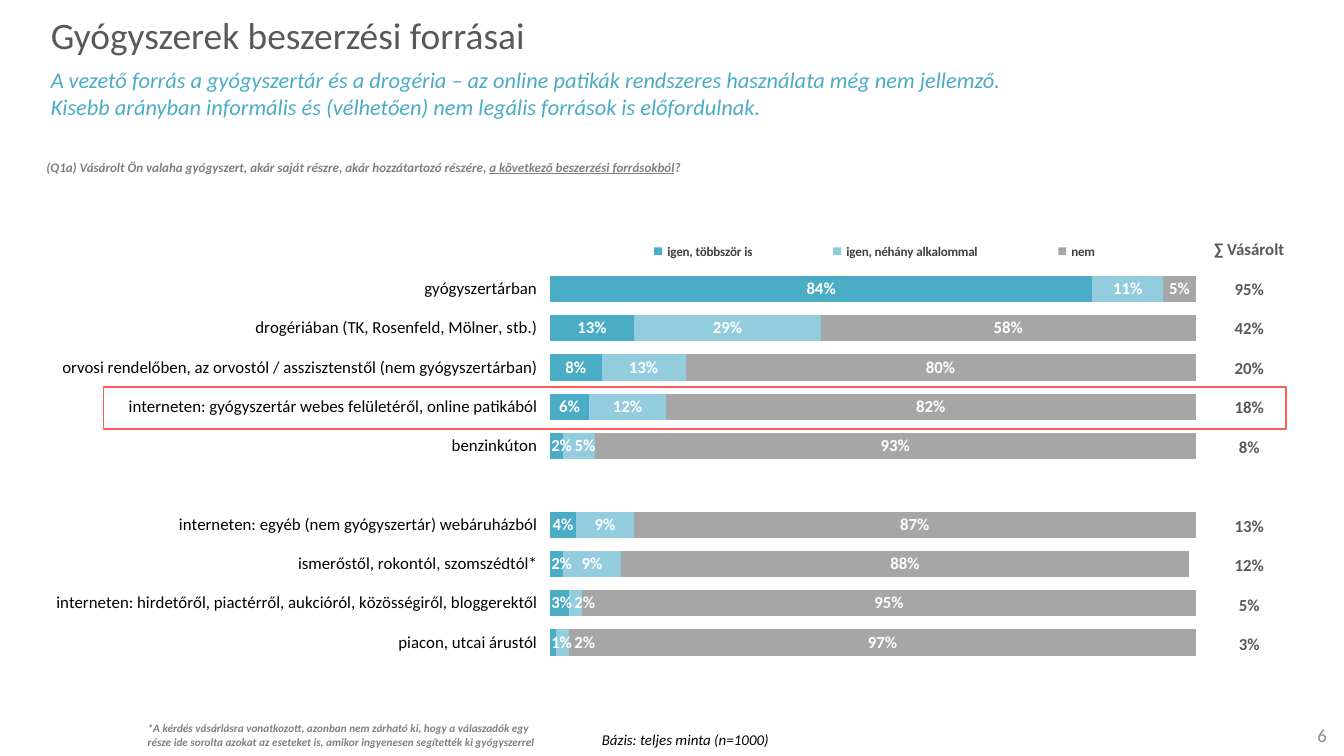
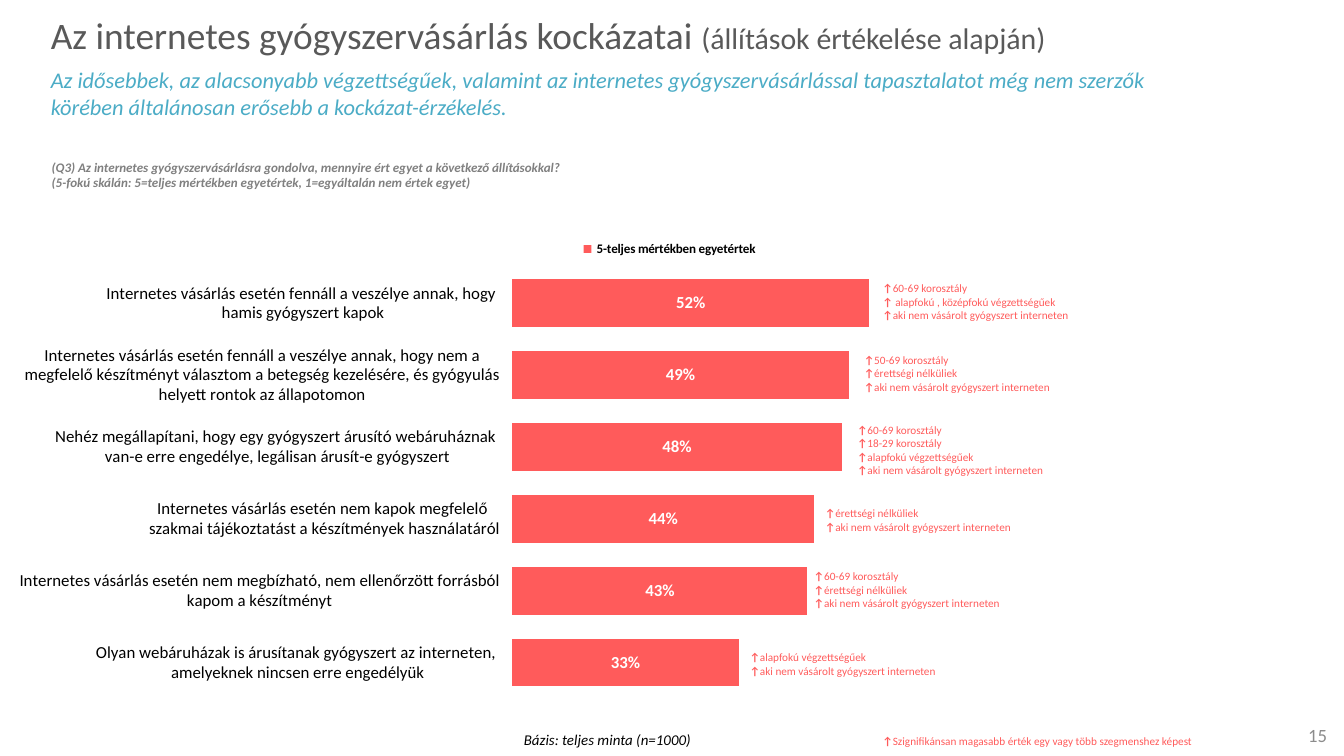
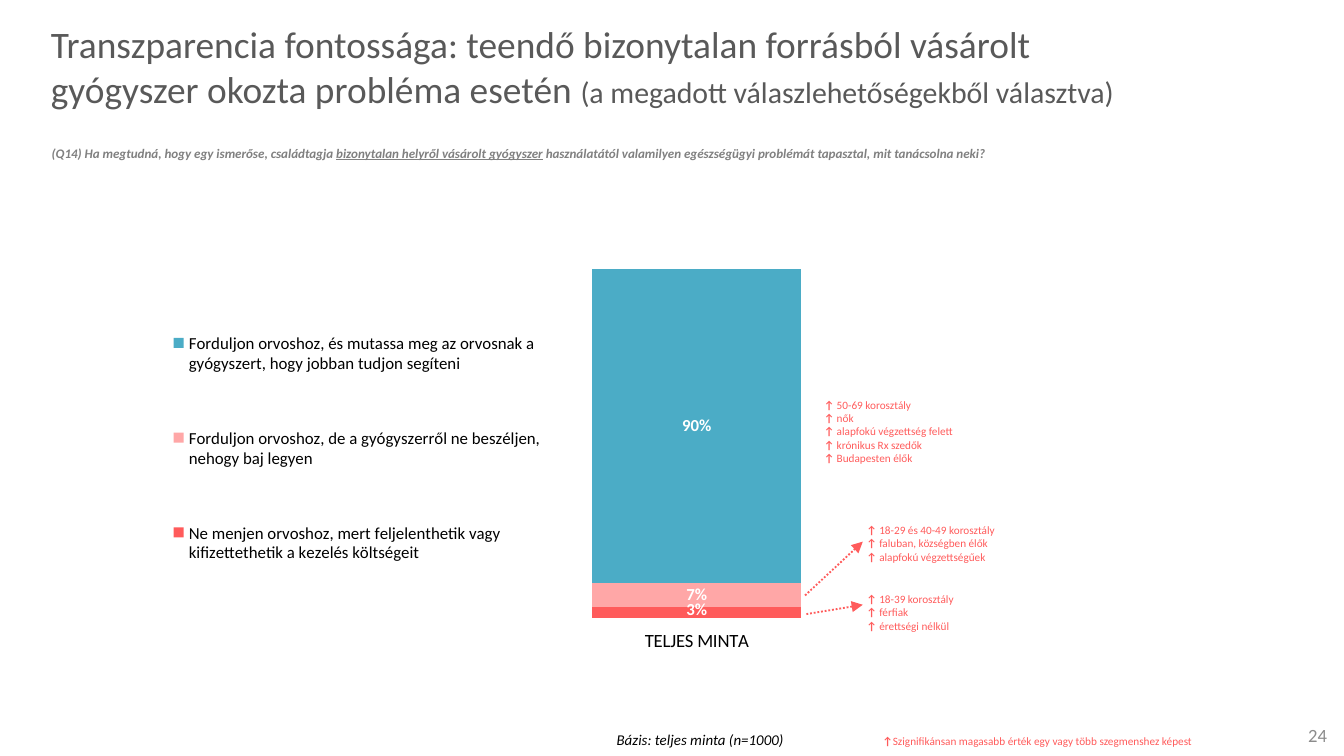
from lxml import etree
from pptx import Presentation
from pptx import util as u
from pptx.chart import data as chart_data
from pptx.dml import color as dml_color
from pptx.enum import chart as charts, dml, shapes, text
from pptx.oxml import ns

Pt = u.Pt
COLORS = {
    "black": "000000", "white": "FFFFFF", "title": "595959", "teal": "4BACC6",
    "light teal": "93CDDD", "gray": "A6A6A6", "red": "FF5B5B", "pink": "FFA7A7",
    "question": "808080", "number": "8C8C8C", "legend": "404040",
}
TITLE = dict(size=20, color="title")
TITLE_ASIDE = dict(size=16, color="title")
SUBTITLE = dict(size=12, color="teal", italic=True)
QUESTION = dict(size=7, color="question", bold=True, italic=True)
UNDERLINED = dict(QUESTION, underline=True)
FOOTNOTE = dict(QUESTION, size=6)
BASE = dict(size=8, color="black", italic=True)
NUMBER = dict(size=10, color="number")
NOTE = dict(size=6, color="red")
NOTE_ARROW = dict(NOTE, bold=True)
TOTAL = dict(size=9, color="title", bold=True)
BAR_LABEL = dict(size=9, color="white", bold=True)
ALIGN = text.PP_ALIGN
BARS = charts.XL_CHART_TYPE.BAR_STACKED
PERCENT = '0"%"'
NO_GRID_STYLE = "{2D5ABB26-0587-4C30-8999-92F81FD0307C}"


def rgb(name):
    return dml_color.RGBColor.from_string(COLORS[name])


def apply_font(font, formats):
    font.name = "Calibri"
    for key, value in formats.items():
        if key == "color":
            font.color.rgb = rgb(value)
        else:
            setattr(font, key, Pt(value) if key == "size" else value)


def write(frame, paragraphs, align=ALIGN.LEFT):
    """Fill a text frame; each paragraph is a list of (text, formats) runs."""
    for index, runs in enumerate(paragraphs):
        paragraph = frame.add_paragraph() if index else frame.paragraphs[0]
        paragraph.alignment = align
        for content, formats in runs:
            run = paragraph.add_run()
            run.text = content
            apply_font(run.font, formats)


def place(parent, index, settings):
    """Give a chart part a manual layout in fractions of the chart."""
    for old in parent.findall(ns.qn("c:layout")):
        parent.remove(old)
    layout = etree.Element(ns.qn("c:layout"))
    manual = etree.SubElement(layout, ns.qn("c:manualLayout"))
    for tag, value in settings.items():
        etree.SubElement(manual, ns.qn("c:" + tag), val=str(value))
    parent.insert(index, layout)


def edges(box):
    return dict(xMode="edge", yMode="edge", **dict(zip("xywh", box)))


def shift_label(series, index, offset):
    """Move one data label by fractions of the chart."""
    apply_font(series.points[index].data_label.font, BAR_LABEL)
    for label in series.data_labels._element.findall(ns.qn("c:dLbl")):
        if label.find(ns.qn("c:idx")).get("val") == str(index):
            place(label, 1, offset)
            label.insert(2, etree.Element(ns.qn("c:numFmt"), formatCode=PERCENT,
                                          sourceLinked="0"))


def spread_labels(plot, extent, plot_share, axis):
    """Keep labels, extent percent long, inside the bar and clear of each other."""
    plot_series = list(plot.series)
    for index in range(len(plot.categories)):
        bar_end = label_end = 0
        for series in plot_series:
            value = series.values[index]
            if value is None:
                continue
            middle = bar_end + value / 2
            center = max(middle, label_end + extent / 2)
            if center > middle:
                offset = round((center - middle) / 100 * plot_share, 4)
                shift = dict(x=offset, y=0) if axis == "x" else dict(x=0, y=-offset)
                shift_label(series, index, shift)
            bar_end += value
            label_end = center + extent / 2


class Deck:
    def __init__(self):
        self.presentation = Presentation()
        self.presentation.slide_width = Pt(720)
        self.presentation.slide_height = Pt(405)
        self.slide = None

    def start(self, number, title, base_left, subtitle=(), title_width=638):
        """Add a slide with its title, page number and base line."""
        self.slide = self.presentation.slides.add_slide(self.presentation.slide_layouts[5])
        shape = self.slide.shapes.title
        shape.left, shape.top = Pt(20), Pt(11.5)
        shape.width, shape.height = Pt(title_width), Pt(48)
        frame = shape.text_frame
        frame.auto_size = text.MSO_AUTO_SIZE.NONE
        frame.vertical_anchor = text.MSO_ANCHOR.MIDDLE
        write(frame, [title] + [[(line, SUBTITLE)] for line in subtitle])
        if subtitle:
            frame.paragraphs[1].space_before = Pt(5)
        self.text((680.4, 383, 37.5, 21.6), [[(str(number), NUMBER)]], ALIGN.RIGHT,
                  text.MSO_ANCHOR.MIDDLE)
        self.text((base_left, 388, 145.5, 17), [[("Bázis: teljes minta (n=1000)", BASE)]],
                  ALIGN.CENTER)

    def text(self, box, paragraphs, align=ALIGN.LEFT, anchor=text.MSO_ANCHOR.TOP):
        frame = self.slide.shapes.add_textbox(*map(Pt, box)).text_frame
        frame.word_wrap = True
        frame.vertical_anchor = anchor
        write(frame, paragraphs, align)

    def notes(self, left, top, lines, width=138, gap=""):
        """Write lines that each start with an up arrow."""
        self.text((left, top, width, 7.2 + 7.3 * len(lines)),
                  [[("↑", NOTE_ARROW), (gap + line, NOTE)] for line in lines])

    def significance(self):
        self.notes(465.8, 390, ["Szignifikánsan magasabb érték egy vagy több "
                                "szegmenshez képest"], 186.5)

    def chart(self, kind, box, categories, series, plot_box, legend_box, legend_font,
              legend_position, maximum, label_extent, gap=50, size=9):
        """Add a stacked chart; series is a list of (name, color, values)."""
        source = chart_data.CategoryChartData(number_format=PERCENT)
        source.categories = categories
        for name, _, values in series:
            source.add_series(name, values)
        chart = self.slide.shapes.add_chart(kind, *map(Pt, box), source).chart
        chart.has_title = False
        apply_font(chart.font, dict(size=size, color="black", bold=False))

        chart.has_legend = True
        legend = chart.legend
        legend.position = legend_position
        legend.include_in_layout = False
        apply_font(legend.font, legend_font)
        place(legend._element, 1, edges(legend_box))

        plot = chart.plots[0]
        plot.gap_width, plot.overlap, plot.vary_by_categories = gap, 100, False
        place(chart._chartSpace.chart.plotArea, 0,
              dict(layoutTarget="inner", **edges(plot_box)))
        for item, (_, color, _) in zip(plot.series, series):
            item.invert_if_negative = False
            item.format.fill.solid()
            item.format.fill.fore_color.rgb = rgb(color)
            labels = item.data_labels
            labels.show_value = True
            labels.number_format, labels.number_format_is_linked = PERCENT, False
            apply_font(labels.font, BAR_LABEL)
        if kind == BARS:
            spread_labels(plot, label_extent, plot_box[2], "x")
        else:
            spread_labels(plot, label_extent, plot_box[3], "y")

        value_axis = chart.value_axis
        value_axis.visible = value_axis.has_major_gridlines = False
        value_axis.minimum_scale, value_axis.maximum_scale = 0, maximum
        chart.category_axis.format.line.fill.background()
        chart.category_axis.reverse_order = kind == BARS

    def column(self, left, top, width, row_height, values):
        """Add a plain one-column table."""
        shape = self.slide.shapes.add_table(len(values), 1, Pt(left), Pt(top), Pt(width),
                                            Pt(row_height * len(values)))
        table = shape.table
        table.first_row = table.horz_banding = False
        table._tbl.tblPr.find(ns.qn("a:tableStyleId")).text = NO_GRID_STYLE
        for row, value in enumerate(values):
            table.rows[row].height = Pt(row_height)
            cell = table.cell(row, 0)
            cell.fill.background()
            cell.vertical_anchor = text.MSO_ANCHOR.MIDDLE
            cell.margin_left = cell.margin_right = cell.margin_top = Pt(0.7)
            cell.margin_bottom = 0
            write(cell.text_frame, [[(value, TOTAL)] if value else []], ALIGN.CENTER)
            if not value:
                etree.SubElement(cell.text_frame.paragraphs[0]._p, ns.qn("a:endParaRPr"),
                                 sz="900")

    def frame(self, box):
        shape = self.slide.shapes.add_shape(shapes.MSO_SHAPE.RECTANGLE, *map(Pt, box))
        shape.shadow.inherit = False
        shape.fill.background()
        shape.line.color.rgb = rgb("red")
        shape.line.width = Pt(1)

    def arrow(self, *ends):
        connector = self.slide.shapes.add_connector(shapes.MSO_CONNECTOR.STRAIGHT,
                                                    *map(Pt, ends))
        connector.line.color.rgb = rgb("red")
        connector.line.width = Pt(1)
        connector.line.dash_style = dml.MSO_LINE.ROUND_DOT
        properties = connector._element.spPr
        etree.SubElement(properties.find(ns.qn("a:ln")), ns.qn("a:tailEnd"), type="triangle")
        etree.SubElement(properties, ns.qn("a:effectLst"))


def add_sources(deck):
    deck.start(6, [("Gyógyszerek beszerzési forrásai", TITLE)], 294.5, [
        "A vezető forrás a gyógyszertár és a drogéria – az online patikák rendszeres "
        "használata még nem jellemző.",
        "Kisebb arányban informális és (vélhetően) nem legális források is előfordulnak.",
    ])
    deck.text((17.8, 81.7, 472, 16), [[
        ("(Q1a) Vásárolt Ön valaha gyógyszert, akár saját részre, akár hozzátartozó "
         "részére, ", QUESTION),
        ("a következő beszerzési forrásokból", UNDERLINED),
        ("?", QUESTION),
    ]])
    sources = [
        ("gyógyszertárban", 84, 11, 5, "95%"),
        ("drogériában (TK, Rosenfeld, Mölner, stb.)", 13, 29, 58, "42%"),
        ("orvosi rendelőben, az orvostól / asszisztenstől (nem gyógyszertárban)",
         8, 13, 80, "20%"),
        ("interneten: gyógyszertár webes felületéről, online patikából", 6, 12, 82, "18%"),
        ("benzinkúton", 2, 5, 93, "8%"),
        ("", None, None, None, ""),
        ("interneten: egyéb (nem gyógyszertár) webáruházból", 4, 9, 87, "13%"),
        ("ismerőstől, rokontól, szomszédtól*", 2, 9, 88, "12%"),
        ("interneten: hirdetőről, piactérről, aukcióról, közösségiről, bloggerektől",
         3, 2, 95, "5%"),
        ("piacon, utcai árustól", 1, 2, 97, "3%"),
    ]
    names, often, sometimes, never, totals = zip(*sources)
    deck.chart(BARS, (15.1, 79.4, 625.4, 290.9), names,
               [("igen, többször is", "teal", often),
                ("igen, néhány alkalommal", "light teal", sometimes),
                ("nem", "gray", never)],
               (0.447, 0.223, 0.553, 0.724), (0.47, 0.17, 0.51, 0.04),
               dict(size=7, color="legend", bold=True),
               charts.XL_LEGEND_POSITION.TOP, 100, label_extent=3.6)
    deck.column(645.1, 123.1, 48.2, 21.15, ["∑ Vásárolt", *totals])
    deck.text((72, 383, 226.8, 21.6), [[
        ("*A kérdés vásárlásra vonatkozott, azonban nem zárható ki, hogy a válaszadók egy "
         "része ide sorolta azokat az eseteket is, amikor ingyenesen segítették ki "
         "gyógyszerrel", FOOTNOTE)]])
    deck.frame((55.5, 207.4, 633.6, 22.3))


def add_risks(deck):
    deck.start(15, [("Az internetes gyógyszervásárlás kockázatai ", TITLE),
                    ("(állítások értékelése alapján)", TITLE_ASIDE)], 252.7, [
        "Az idősebbek, az alacsonyabb végzettségűek, valamint az internetes "
        "gyógyszervásárlással tapasztalatot még nem szerzők körében általánosan erősebb "
        "a kockázat-érzékelés.",
    ])
    deck.text((20.6, 81.7, 639.4, 24.5), [
        [("(Q3) Az internetes gyógyszervásárlásra gondolva, mennyire ért egyet a következő "
          "állításokkal?", QUESTION)],
        [("(5-fokú skálán: 5=teljes mértékben egyetértek, 1=egyáltalán nem értek egyet)",
          QUESTION)],
    ])
    no_diploma, low_schooling = "érettségi nélküliek", "alapfokú végzettségűek"
    never_online = "aki nem vásárolt gyógyszert interneten"
    risks = [
        ("Internetes vásárlás esetén fennáll a veszélye annak, hogy \nhamis gyógyszert kapok",
         52, 465.8, 147.4, ["60-69 korosztály", " alapfokú , középfokú végzettségűek"]),
        ("Internetes vásárlás esetén fennáll a veszélye annak, hogy nem a megfelelő "
         "készítményt választom a betegség kezelésére, és gyógyulás helyett rontok az "
         "állapotomon",
         49, 455.8, 185.7, ["50-69 korosztály", no_diploma]),
        ("Nehéz megállapítani, hogy egy gyógyszert árusító webáruháznak \nvan-e erre "
         "engedélye, legálisan árusít-e gyógyszert",
         48, 452.2, 223.2, ["60-69 korosztály", "18-29 korosztály", low_schooling]),
        ("Internetes vásárlás esetén nem kapok megfelelő \nszakmai tájékoztatást a "
         "készítmények használatáról",
         44, 435, 267.8, [no_diploma]),
        ("Internetes vásárlás esetén nem megbízható, nem ellenőrzött forrásból kapom a "
         "készítményt",
         43, 429, 301.7, ["60-69 korosztály", no_diploma]),
        ("Olyan webáruházak is árusítanak gyógyszert az interneten, \namelyeknek nincsen "
         "erre engedélyük",
         33, 394.6, 345, [low_schooling]),
    ]
    deck.chart(BARS, (5, 72.2, 637.2, 319), [risk[0] for risk in risks],
               [("5-teljes mértékben egyetértek", "red", [risk[1] for risk in risks])],
               (0.423, 0.223, 0.577, 0.724), (0.465, 0.172, 0.18, 0.04),
               dict(size=7, color="black", bold=True),
               charts.XL_LEGEND_POSITION.TOP, 100, label_extent=3.6)
    for _, _, left, top, groups in risks:
        deck.notes(left, top, groups + [never_online])
    deck.significance()


def add_transparency(deck):
    deck.start(24, [("Transzparencia fontossága: teendő bizonytalan forrásból vásárolt "
                     "gyógyszer okozta probléma esetén ", TITLE),
                    ("(a megadott válaszlehetőségekből választva)", TITLE_ASIDE)],
               302.4, title_width=617.8)
    deck.text((20.6, 74.2, 639.4, 16), [[
        ("(Q14) Ha megtudná, hogy egy ismerőse, családtagja ", QUESTION),
        ("bizonytalan helyről vásárolt gyógyszer", UNDERLINED),
        (" használatától valamilyen egészségügyi problémát tapasztal, mit tanácsolna neki?",
         QUESTION),
    ]])
    deck.chart(charts.XL_CHART_TYPE.COLUMN_STACKED_100, (8.6, 115.4, 663.8, 252.7),
               ["TELJES MINTA"],
               [("Ne menjen orvoshoz, mert feljelenthetik vagy kifizettethetik a kezelés "
                 "költségeit", "red", [3]),
                ("Forduljon orvoshoz, de a gyógyszerről ne beszéljen, nehogy baj legyen",
                 "pink", [7]),
                ("Forduljon orvoshoz, és mutassa meg az orvosnak a gyógyszert, hogy jobban "
                 "tudjon segíteni", "teal", [90])],
               (0.381, 0.113, 0.337, 0.74), (0.115, 0.135, 0.32, 0.72),
               dict(size=9, color="black", bold=False),
               charts.XL_LEGEND_POSITION.LEFT, 1, label_extent=4.4, gap=100, size=10)
    for left, top, groups in [
        (434.4, 209.6, ["50-69 korosztály", "nők", "alapfokú végzettség felett",
                        "krónikus Rx szedők", "Budapesten élők"]),
        (457.2, 313.6, ["18-39 korosztály", "férfiak", "érettségi nélkül"]),
        (457.2, 276.6, ["18-29 és 40-49 korosztály", "faluban, községben élők",
                        "alapfokú végzettségűek"]),
    ]:
        deck.notes(left, top, groups, 93.6, " ")
    deck.arrow(431.3, 319, 462.2, 290.2)
    deck.arrow(432, 329, 462.2, 324)
    deck.significance()


def main():
    deck = Deck()
    add_sources(deck)
    add_risks(deck)
    add_transparency(deck)
    deck.presentation.save("out.pptx")


if __name__ == "__main__":
    main()
